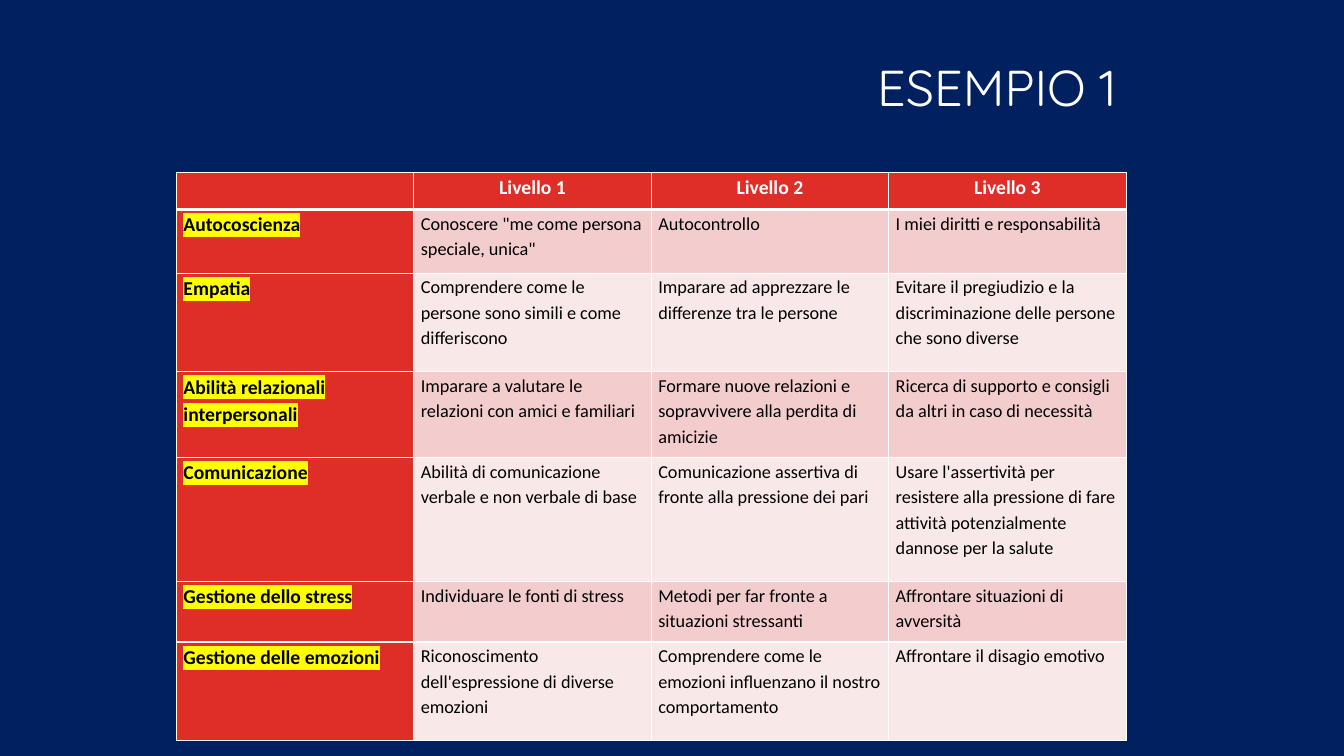
import pptx
import pptx.util
import pptx.dml.color
import pptx.enum.text
import pptx.oxml
import pptx.oxml.ns
from pptx.util import Inches

COLORS = {
    "back": "002060",
    "white": "FFFFFF",
    "black": "000000",
    "red": "DF2E28",
    "rose": "F3CDCD",
    "pale": "F9E8E8",
    "mark": "FFFF00",
}
ALIGN = pptx.enum.text.PP_ALIGN
HEIGHTS = [0.37, 0.63, 0.98, 0.85, 1.23, 0.6, 0.98]
SKILLS = [
    ["", "Livello 1", "Livello 2", "Livello 3"],
    ["Autocoscienza", 'Conoscere "me come persona speciale, unica"',
     "Autocontrollo", "I miei diritti e responsabilità"],
    ["Empatia", "Comprendere come le persone sono simili e come differiscono",
     "Imparare ad apprezzare le differenze tra le persone",
     "Evitare il pregiudizio e la discriminazione delle persone che sono diverse"],
    ["Abilità relazionali interpersonali",
     "Imparare a valutare le relazioni con amici e familiari",
     "Formare nuove relazioni e sopravvivere alla perdita di amicizie",
     "Ricerca di supporto e consigli da altri in caso di necessità"],
    ["Comunicazione", "Abilità di comunicazione verbale e non verbale di base",
     "Comunicazione assertiva di fronte alla pressione dei pari",
     "Usare l'assertività per resistere alla pressione di fare attività "
     "potenzialmente dannose per la salute"],
    ["Gestione dello stress", "Individuare le fonti di stress",
     "Metodi per far fronte a situazioni stressanti",
     "Affrontare situazioni di avversità"],
    ["Gestione delle emozioni",
     "Riconoscimento dell'espressione di diverse emozioni",
     "Comprendere come le emozioni influenzano il nostro comportamento",
     "Affrontare il disagio emotivo"],
]


def rgb(name):
    return pptx.dml.color.RGBColor.from_string(COLORS[name])


def node(tag, color, attrs="", wrap=False):
    """Make a drawing element that holds one colour."""
    fill = f'<a:srgbClr val="{COLORS[color]}"/>'
    if wrap:
        fill = f"<a:solidFill>{fill}</a:solidFill>"
    space = pptx.oxml.ns.nsdecls("a")
    return pptx.oxml.parse_xml(f"<a:{tag} {space} {attrs}>{fill}</a:{tag}>")


class Deck:
    def __init__(self):
        self.show = pptx.Presentation()
        self.show.slide_width = Inches(13.33)
        self.show.slide_height = Inches(7.5)
        self.slide = self.show.slides.add_slide(self.show.slide_layouts[6])
        fill = self.slide.background.fill
        fill.solid()
        fill.fore_color.rgb = rgb("back")

    def style(self, para, face, size, color, bold=False, mark=False):
        for run in para.runs:
            font = run.font
            font.name, font.size, font.bold = face, pptx.util.Pt(size), bold
            font.color.rgb = rgb(color)
            if mark:
                fill = run._r.rPr.find(pptx.oxml.ns.qn("a:solidFill"))
                fill.addnext(node("highlight", "mark"))

    def title(self, text, left, top, width, height):
        frame = self.slide.shapes.add_textbox(
            Inches(left), Inches(top), Inches(width), Inches(height)).text_frame
        frame.word_wrap = True
        frame.vertical_anchor = pptx.enum.text.MSO_ANCHOR.MIDDLE
        frame.text = text
        para = frame.paragraphs[0]
        para.alignment = ALIGN.RIGHT
        para.line_spacing = 0.9
        self.style(para, "Quicksand", 36, "white")

    def borders(self, cell, row):
        widths = {"L": 1, "R": 1, "T": 3 if row == 1 else 1, "B": 3 if row == 0 else 1}
        props = cell._tc.get_or_add_tcPr()
        for spot, (side, width) in enumerate(widths.items()):
            attrs = f'w="{pptx.util.Pt(width)}"'
            props.insert(spot, node("ln" + side, "white", attrs, wrap=True))

    def cell(self, cell, text, row, col):
        head, label = row == 0, col == 0
        cell.margin_left = cell.margin_right = Inches(0.07)
        cell.margin_top = cell.margin_bottom = 0
        cell.fill.solid()
        shade = "rose" if row % 2 else "pale"
        cell.fill.fore_color.rgb = rgb("red" if head or label else shade)
        self.borders(cell, row)
        if not text:
            return
        cell.text_frame.text = text
        para = cell.text_frame.paragraphs[0]
        para.alignment = ALIGN.CENTER if head else ALIGN.LEFT
        para.line_spacing = 1.15
        para.space_after = pptx.util.Pt(6)
        bold = head or label
        self.style(para, "Calibri", 14 if bold else 13,
                   "white" if head else "black", bold, mark=label)

    def table(self, rows, heights, left, top, width):
        count = len(rows[0])
        grid = self.slide.shapes.add_table(
            len(rows), count, Inches(left), Inches(top),
            Inches(width), Inches(sum(heights))).table
        for col in grid.columns:
            col.width = Inches(width / count)
        for row, (texts, height) in enumerate(zip(rows, heights)):
            grid.rows[row].height = Inches(height)
            for col, text in enumerate(texts):
                self.cell(grid.cell(row, col), text, row, col)


def main():
    deck = Deck()
    deck.title("ESEMPIO 1", 1.75, 0.19, 9.42, 1.41)
    deck.table(SKILLS, HEIGHTS, 1.75, 1.71, 9.42)
    deck.show.save("out.pptx")


if __name__ == "__main__":
    main()
